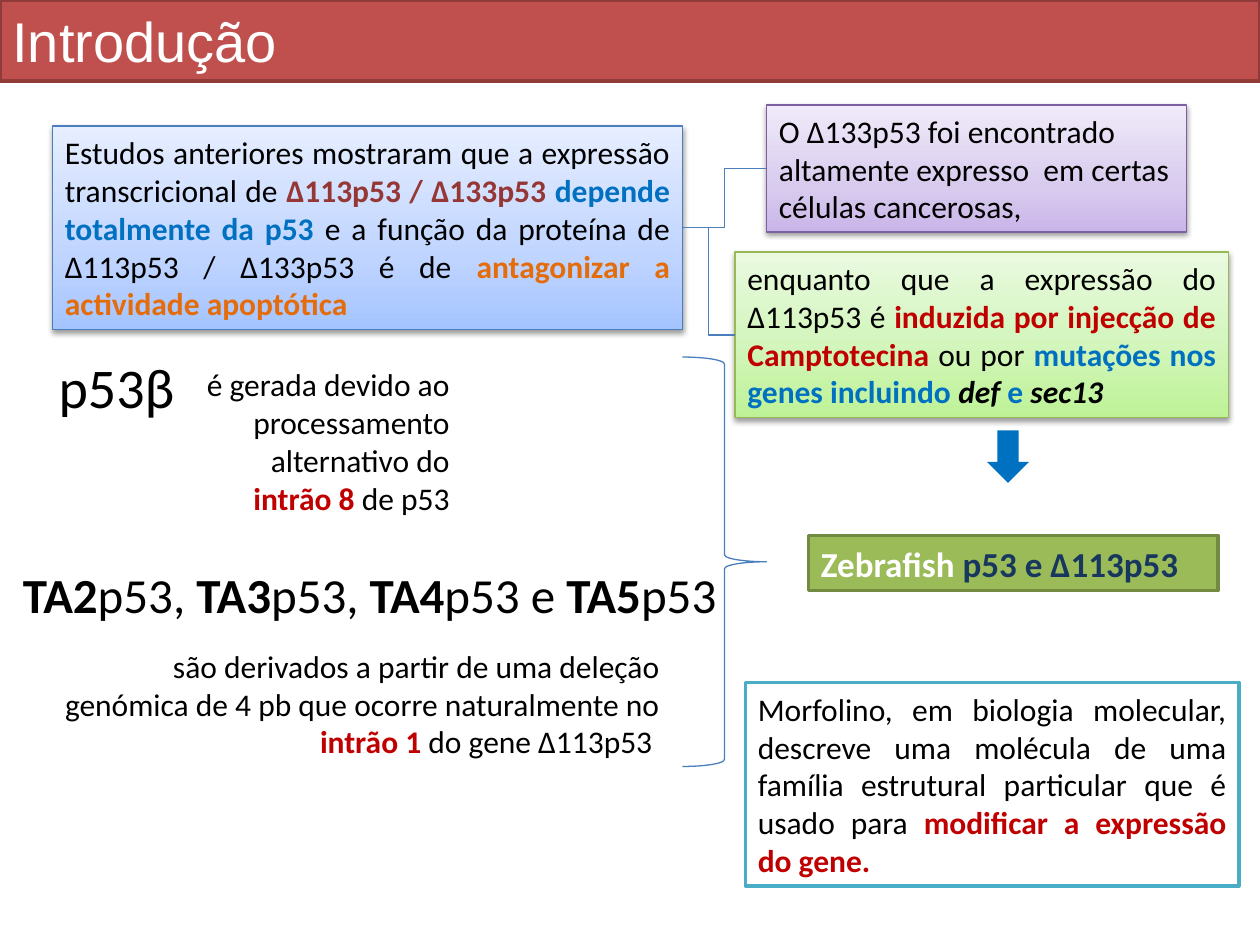
from lxml import etree
from pptx import Presentation, util as u
from pptx.dml.color import RGBColor
from pptx.enum import shapes, text
from pptx.oxml import parse_xml
from pptx.oxml.ns import nsdecls, qn

C = {"black": "000000", "white": "FFFFFF", "red": "C00000", "blue": "0070C0",
     "wine": "953735", "orange": "E46C0A", "navy": "17375E", "edge": "4B7EBC",
     "brick": "C0504D", "brick_edge": "8E3B39", "violet_edge": "7D60A0",
     "lime_edge": "98B955", "teal": "4BACC6", "olive": "9BBB59", "olive_edge": "738A42"}
GRADIENTS = {"sky": ((0, "A4C4FF"), (35, "BFD4FF"), (100, "E6EEFF")),
             "violet": ((0, "C9B5E8"), (35, "D8CBEE"), (100, "F0EAF9")),
             "lime": ((0, "BEF297"), (50, "D5F6C0"), (100, "EAFAE0"))}
KINDS, ALIGN = shapes.MSO_SHAPE, text.PP_ALIGN

prs = Presentation()
prs.slide_width, prs.slide_height = u.Inches(10), u.Inches(7.5)
COL, ROW = prs.slide_width / 120, prs.slide_height / 90
s = prs.slides.add_slide(prs.slide_layouts[6])


def grid(x, y, w, h):
    return int(x * COL), int(y * ROW), int(w * COL), int(h * ROW)


def write(sp, runs, size, align=ALIGN.LEFT, font="Calibri", wrap=True):
    """Fill a shape with runs of (text, colour, style), style holding b and/or i."""
    tf = sp.text_frame
    tf.word_wrap = wrap
    tf.vertical_anchor = text.MSO_ANCHOR.TOP if sp.shape_type == 17 else text.MSO_ANCHOR.MIDDLE
    p = tf.paragraphs[0]
    p.alignment = align
    for words, colour, style in runs:
        r = p.add_run()
        r.text = words
        r.font.name, r.font.size = font, u.Pt(size)
        r.font.bold, r.font.italic = "b" in style, "i" in style
        r.font.color.rgb = RGBColor.from_string(C[colour])


# Filled boxes: place, fill, edge, edge width, size, alignment, font, runs
boxes = [
    ((5, 12, 60, 19.4), "sky", "edge", 0.75, 18, ALIGN.JUSTIFY, "Calibri", [
        ("Estudos anteriores mostraram que a expressão transcricional de ", "black", ""),
        ("Δ113p53 / Δ133p53 ", "wine", "b"),
        ("depende totalmente da p53 ", "blue", "b"),
        ("e a função da proteína de Δ113p53 / Δ133p53 é de ", "black", ""),
        ("antagonizar a actividade apoptótica ", "orange", "b")]),
    ((0, 0, 120, 7.7), "brick", "brick_edge", 2, 32, ALIGN.LEFT, "Arial", [
        ("Introdução", "white", "")]),
    ((73, 10, 40, 12.1), "violet", "violet_edge", 0.75, 18, ALIGN.LEFT, "Calibri", [
        ("O Δ133p53 foi encontrado altamente expresso  em certas células cancerosas,",
         "black", "")]),
    ((70, 24, 47, 15.75), "lime", "lime_edge", 0.75, 18, ALIGN.JUSTIFY, "Calibri", [
        ("enquanto que a expressão do Δ113p53 é ", "black", ""),
        ("induzida por injecção de Camptotecina ", "red", "b"),
        ("ou por ", "black", ""),
        ("mutações nos genes incluindo ", "blue", "b"),
        ("def ", "black", "bi"), ("e ", "blue", "b"), ("sec13", "black", "bi")]),
    ((71, 65, 47, 19.4), "white", "teal", 2, 18, ALIGN.JUSTIFY, "Calibri", [
        ("Morfolino, em biologia molecular, descreve uma molécula de uma família "
         "estrutural particular que é usado para ", "black", ""),
        ("modificar a expressão do gene.", "red", "b")]),
    ((77, 51, 39, 5.25), "olive", "olive_edge", 2, 20, ALIGN.LEFT, "Calibri", [
        ("Zebrafish ", "white", "b"), ("p53 e Δ113p53", "navy", "b")]),
]
for place, fill, edge, width, size, align, font, runs in boxes:
    sp = s.shapes.add_shape(KINDS.RECTANGLE, *grid(*place))
    sp.shadow.inherit = False
    sp.line.color.rgb = RGBColor.from_string(C[edge])
    sp.line.width = u.Pt(width)
    if fill in GRADIENTS:
        stops = "".join(f'<a:gs pos="{pos * 1000}"><a:srgbClr val="{colour}"/></a:gs>'
                        for pos, colour in GRADIENTS[fill])
        sp._element.spPr.find(qn("a:prstGeom")).addnext(parse_xml(
            f'<a:gradFill {nsdecls("a")} rotWithShape="1"><a:gsLst>{stops}</a:gsLst>'
            '<a:lin ang="16200000" scaled="0"/></a:gradFill>'))
        sp._element.spPr.find(qn("a:effectLst")).append(parse_xml(
            f'<a:outerShdw {nsdecls("a")} blurRad="40000" dist="20000" dir="5400000" '
            'rotWithShape="0"><a:srgbClr val="000000"><a:alpha val="38000"/></a:srgbClr>'
            '</a:outerShdw>'))
    else:
        sp.fill.solid()
        sp.fill.fore_color.rgb = RGBColor.from_string(C[fill])
    write(sp, runs, size, align, font)

# Plain texts: place, size, alignment, wrap, runs
variants = [(part, "black", style) for name, tail in
            (("TA2", "p53, "), ("TA3", "p53, "), ("TA4", "p53 e "), ("TA5", "p53"))
            for part, style in ((name, "b"), (tail, ""))]
labels = [
    ((1, 53.2, 74, 6.9), 28, ALIGN.LEFT, True, variants),
    ((4.4, 33, 13.5, 7.7), 32, ALIGN.LEFT, False, [("p53β", "black", "")]),
    ((17, 34.2, 27, 15.75), 18, ALIGN.RIGHT, True, [
        ("é gerada devido ao processamento alternativo do ", "black", ""),
        ("intrão 8", "red", "b"), (" de p53", "black", "")]),
    ((4, 61, 60, 12.1), 18, ALIGN.RIGHT, True, [
        ("são derivados a partir de uma deleção genómica de 4 pb que ocorre "
         "naturalmente no ", "black", ""),
        ("intrão 1", "red", "b"), (" do gene Δ113p53 ", "black", "")]),
]
for place, size, align, wrap, runs in labels:
    write(s.shapes.add_textbox(*grid(*place)), runs, size, align, wrap=wrap)

# Elbows from the study box to the two findings
for x, y in ((70, 31.9), (73, 16.05)):
    link = s.shapes.add_connector(shapes.MSO_CONNECTOR.ELBOW, *grid(65, 21.7, x, y))
    link.line.color.rgb = RGBColor.from_string(C["edge"])
    link.line.width = u.Pt(0.75)
    etree.SubElement(link._element.spPr, qn("a:effectLst"))

arrow = s.shapes.add_shape(KINDS.DOWN_ARROW, *grid(94, 41, 4, 5))
arrow.shadow.inherit = False
arrow.fill.solid()
arrow.fill.fore_color.rgb = RGBColor.from_string(C["blue"])
arrow.line.fill.background()

brace = s.shapes.add_shape(KINDS.RIGHT_BRACE, *grid(65, 34, 8, 39))
brace.shadow.inherit = False
brace.fill.background()
brace.line.color.rgb = RGBColor.from_string(C["edge"])
brace.line.width = u.Pt(0.75)

prs.save("out.pptx")
